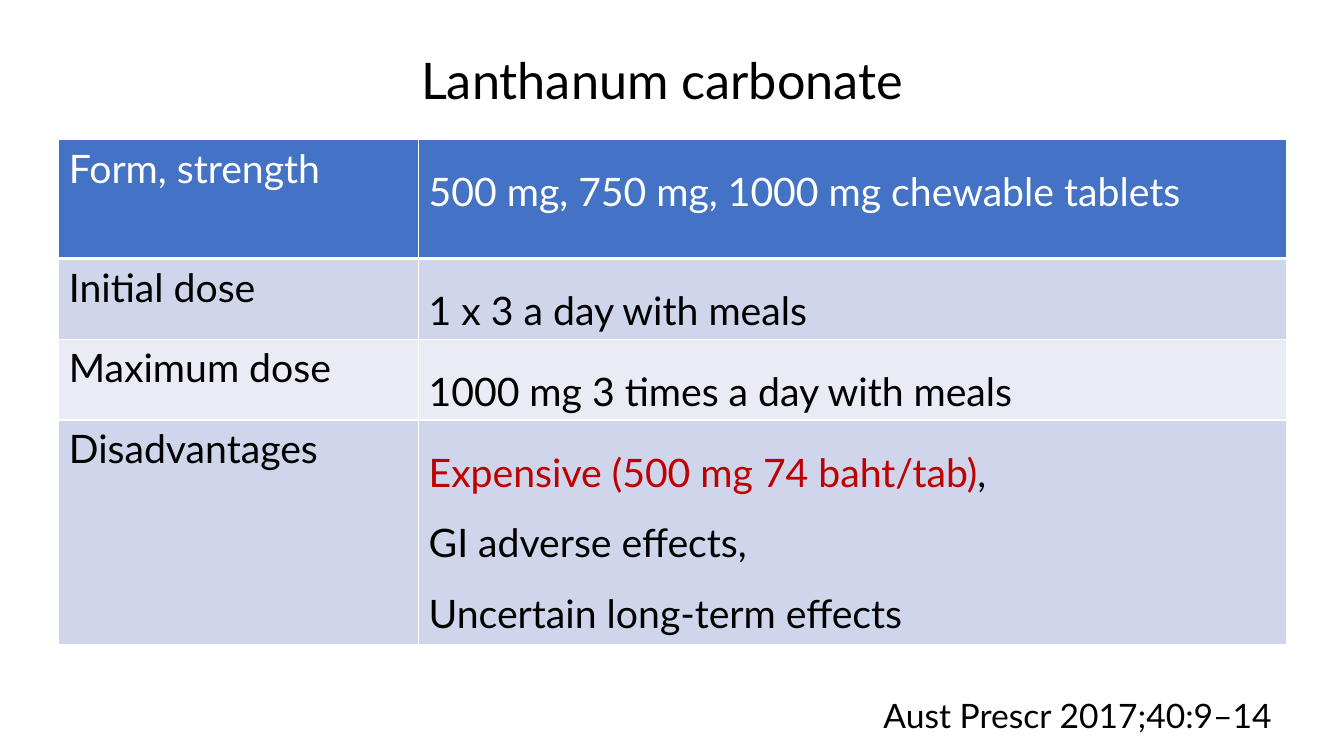
"""Build the lanthanum carbonate dosing slide."""
import dataclasses

import lxml.etree
import pptx
import pptx.dml.color
import pptx.enum.text
import pptx.oxml.ns
import pptx.util

Pt = pptx.util.Pt
ALIGN = pptx.enum.text.PP_ALIGN


@dataclasses.dataclass(frozen=True)
class Theme:
    font: str = "Lato"
    title_size: int = 36
    body_size: int = 28
    source_size: int = 24
    ink: str = "000000"
    light: str = "FFFFFF"
    accent: str = "C00000"
    header: str = "4472C4"
    bands: tuple = ("E9EBF5", "CFD5EA")
    rule: int = 1
    header_rule: int = 3


THEME = Theme()

DOSING = [
    ("Form, strength", [[("500 mg, 750 mg, 1000 mg chewable tablets", THEME.light)]]),
    ("Initial dose", [[("1 x 3 a day with meals", THEME.ink)]]),
    ("Maximum dose", [[("1000 mg 3 times a day with meals", THEME.ink)]]),
    ("Disadvantages", [
        [("Expensive (500 mg 74 baht/tab)", THEME.accent), (",", THEME.ink)],
        [("GI adverse effects,", THEME.ink)],
        [("Uncertain long-term effects", THEME.ink)],
    ]),
]
COLUMN_WIDTHS = (257, 620)
ROW_HEIGHTS = (85, 55.4, 55.4, 160.6)


def set_attributes(target, values):
    for name, value in values.items():
        setattr(target, name, value)


def write_text(tf, paragraphs, size, **paragraph_format):
    for i, runs in enumerate(paragraphs):
        p = tf.add_paragraph() if i else tf.paragraphs[0]
        set_attributes(p, paragraph_format)
        for text, color in runs:
            r = p.add_run()
            r.text = text
            set_attributes(r.font, {"name": THEME.font, "size": Pt(size), "bold": False})
            r.font.color.rgb = pptx.dml.color.RGBColor.from_string(color)


def add_text(s, box, text, size, **paragraph_format):
    tf = s.shapes.add_textbox(*map(Pt, box)).text_frame
    set_attributes(tf, {
        "word_wrap": True,
        "auto_size": pptx.enum.text.MSO_AUTO_SIZE.SHAPE_TO_FIT_TEXT,
    })
    write_text(tf, [[(text, THEME.ink)]], size, **paragraph_format)


def set_borders(cell, widths):
    qn = pptx.oxml.ns.qn
    tc_pr = cell._tc.get_or_add_tcPr()
    for i, (side, width) in enumerate(widths.items()):
        ln = lxml.etree.Element(qn(f"a:ln{side}"), w=str(int(Pt(width))))
        fill = lxml.etree.SubElement(ln, qn("a:solidFill"))
        lxml.etree.SubElement(fill, qn("a:srgbClr"), val=THEME.light)
        tc_pr.insert(i, ln)


def add_dosing_table(s, left, top):
    size = (sum(COLUMN_WIDTHS), sum(ROW_HEIGHTS))
    table = s.shapes.add_table(
        len(DOSING), len(COLUMN_WIDTHS), *map(Pt, (left, top, *size))).table
    set_attributes(table, {"first_row": False, "horz_banding": False})
    for column, width in zip(table.columns, COLUMN_WIDTHS):
        column.width = Pt(width)
    for i, (label, details) in enumerate(DOSING):
        table.rows[i].height = Pt(ROW_HEIGHTS[i])
        label_color = THEME.ink if i else THEME.light
        band = THEME.bands[i % 2] if i else THEME.header
        widths = {
            "L": THEME.rule,
            "R": THEME.rule,
            "T": THEME.header_rule if i == 1 else THEME.rule,
            "B": THEME.header_rule if i == 0 else THEME.rule,
        }
        label_cell, detail_cell = table.cell(i, 0), table.cell(i, 1)
        write_text(label_cell.text_frame, [[(label, label_color)]], THEME.body_size)
        write_text(detail_cell.text_frame, details, THEME.body_size, line_spacing=1.5)
        for cell in (label_cell, detail_cell):
            cell.fill.solid()
            cell.fill.fore_color.rgb = pptx.dml.color.RGBColor.from_string(band)
            set_borders(cell, widths)


def main():
    prs = pptx.Presentation()
    set_attributes(prs, {"slide_width": Pt(960), "slide_height": Pt(540)})
    s = prs.slides.add_slide(prs.slide_layouts[6])
    add_text(s, (-7, 10, 960, 67), "Lanthanum carbonate", THEME.title_size,
             alignment=ALIGN.CENTER, line_spacing=1.5)
    add_text(s, (624, 493, 305, 36), "Aust Prescr 2017;40:9–14", THEME.source_size)
    add_dosing_table(s, 42, 99.7)
    prs.save("out.pptx")


if __name__ == "__main__":
    main()
